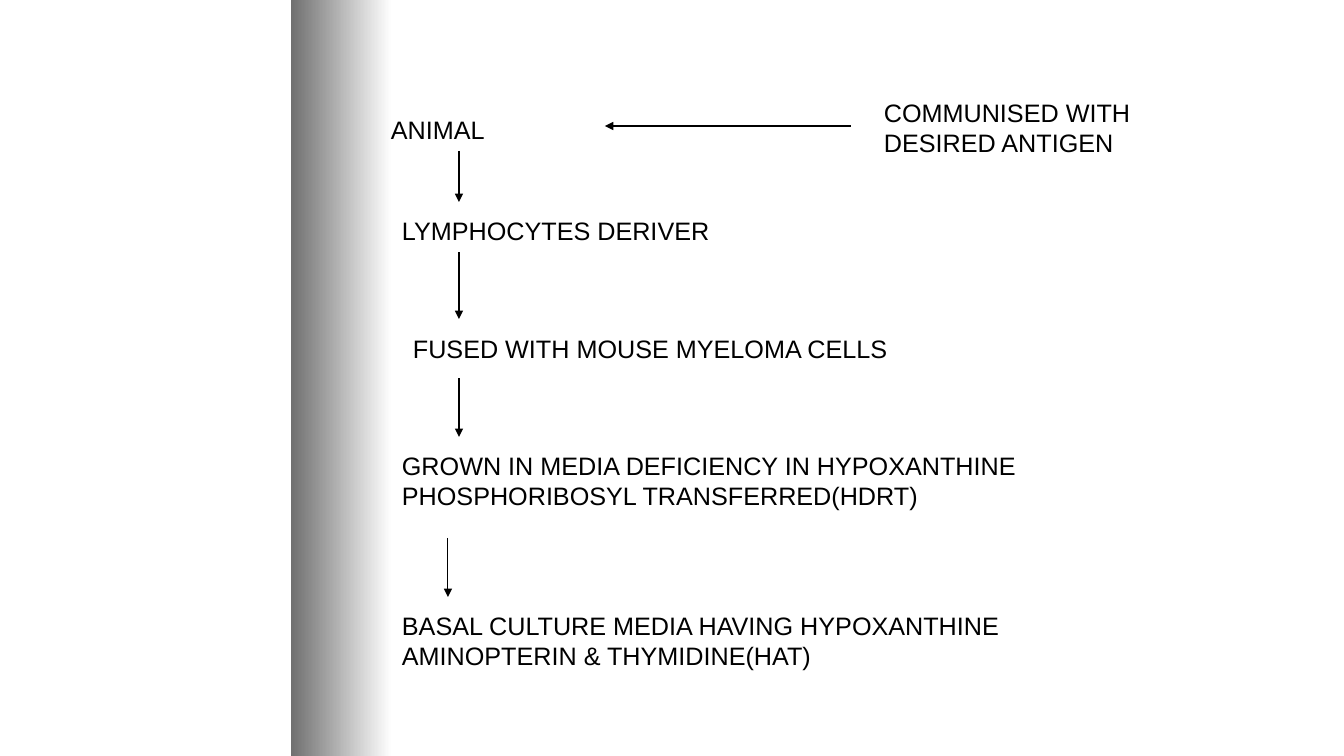
import pptx
import pptx.util
import pptx.dml.color
import pptx.enum.shapes
import pptx.enum.text
import pptx.oxml.ns
from lxml import etree

BLACK = pptx.dml.color.RGBColor(0x00, 0x00, 0x00)
GRAY = pptx.dml.color.RGBColor(0x70, 0x70, 0x70)
WHITE = pptx.dml.color.RGBColor(0xFF, 0xFF, 0xFF)
EMU_PER_PX = 914400 / 100.8


def px(n):
    return pptx.util.Emu(round(n * EMU_PER_PX))


def add_text(tf, text, font="Arial", size=18, color=BLACK):
    p = tf.paragraphs[0]
    r = p.add_run()
    r.text = text
    r.font.name = font
    r.font.size = pptx.util.Pt(size)
    r.font.color.rgb = color


class Flow:
    """Style and current slide of the flow diagram."""

    def __init__(self, prs, line_width=0.75):
        self.s = prs.slides.add_slide(prs.slide_layouts[6])
        self.line_width = pptx.util.Pt(line_width)

    def band(self, x, y, w, h):
        sp = self.s.shapes.add_shape(
            pptx.enum.shapes.MSO_SHAPE.RECTANGLE, px(x), px(y), px(w), px(h))
        sp.shadow.inherit = False
        sp.line.fill.background()
        sp.fill.gradient()
        sp.fill.gradient_angle = 0
        for stop, color in zip(sp.fill.gradient_stops, (GRAY, WHITE)):
            stop.color.rgb = color

    def label(self, text, x, y, w, h=40):
        sp = self.s.shapes.add_textbox(px(x), px(y), px(w), px(h))
        tf = sp.text_frame
        tf.word_wrap = True
        tf.auto_size = pptx.enum.text.MSO_AUTO_SIZE.SHAPE_TO_FIT_TEXT
        add_text(tf, text)

    def arrow(self, x1, y1, x2, y2):
        sp = self.s.shapes.add_connector(
            pptx.enum.shapes.MSO_CONNECTOR.STRAIGHT,
            px(x1), px(y1), px(x2), px(y2))
        sp.line.color.rgb = BLACK
        sp.line.width = self.line_width
        qn = pptx.oxml.ns.qn
        etree.SubElement(sp.line.fill._xPr, qn("a:tailEnd"), type="triangle")
        etree.SubElement(sp._element.spPr, qn("a:effectLst"))


def main():
    prs = pptx.Presentation()
    prs.slide_width, prs.slide_height = px(1344), px(756)
    flow = Flow(prs)

    # Shaded band
    flow.band(291, 0, 101, 756)

    # Steps, top to bottom
    for text, x, y, w, h in (
        ("ANIMAL", 381, 109, 179, 40),
        ("LYMPHOCYTES DERIVER", 392, 210, 460, 40),
        ("FUSED WITH MOUSE MYELOMA CELLS", 403, 328, 717, 40),
        ("GROWN IN MEDIA DEFICIENCY IN HYPOXANTHINE "
         "PHOSPHORIBOSYL TRANSFERRED(HDRT)", 392, 445, 750, 71),
        ("BASAL CULTURE MEDIA HAVING HYPOXANTHINE "
         "AMINOPTERIN & THYMIDINE(HAT)", 392, 605, 717, 71),
    ):
        flow.label(text, x, y, w, h)

    # Arrows between steps
    for x, top, bottom in ((459, 151, 202), (459, 252, 319),
                           (459, 378, 437), (448, 538, 597)):
        flow.arrow(x, top, x, bottom)

    # Antigen input
    flow.label("COMMUNISED WITH DESIRED ANTIGEN", 874, 92, 375, 71)
    flow.arrow(851, 126, 605, 126)

    prs.save("out.pptx")


if __name__ == "__main__":
    main()
